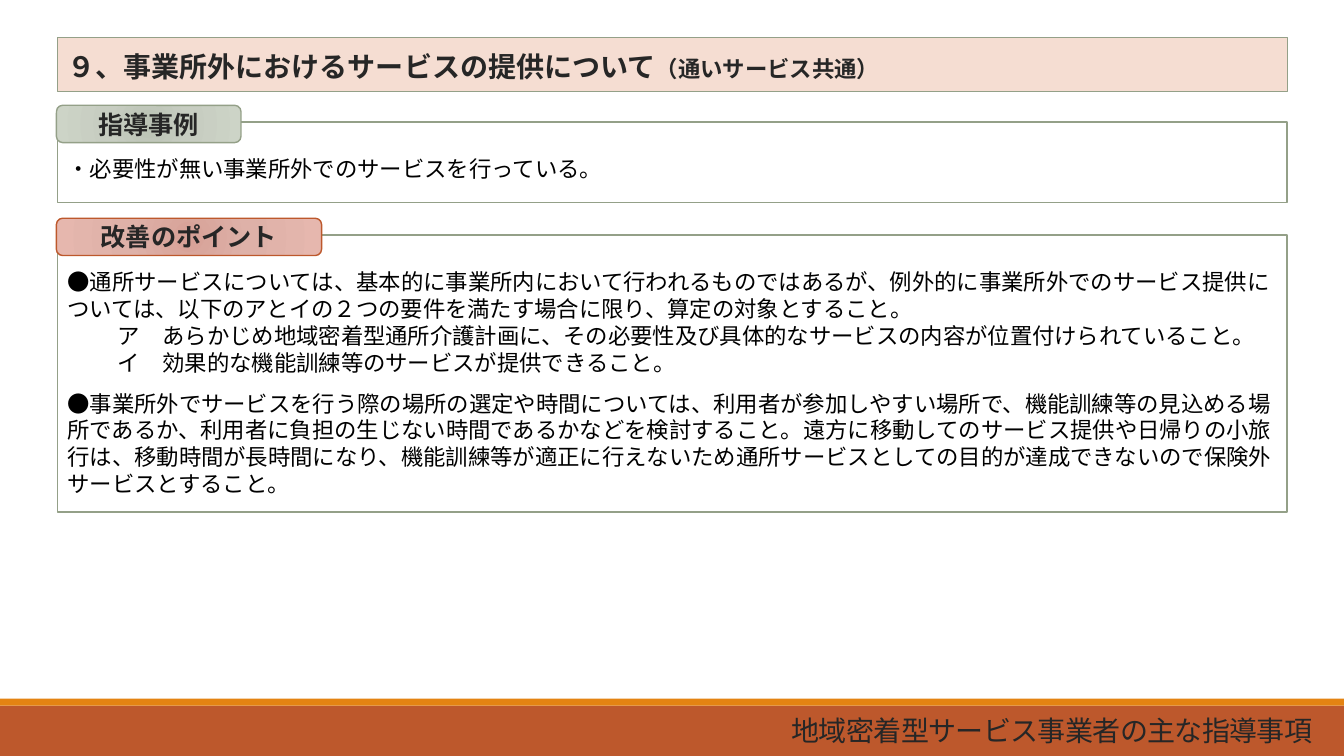
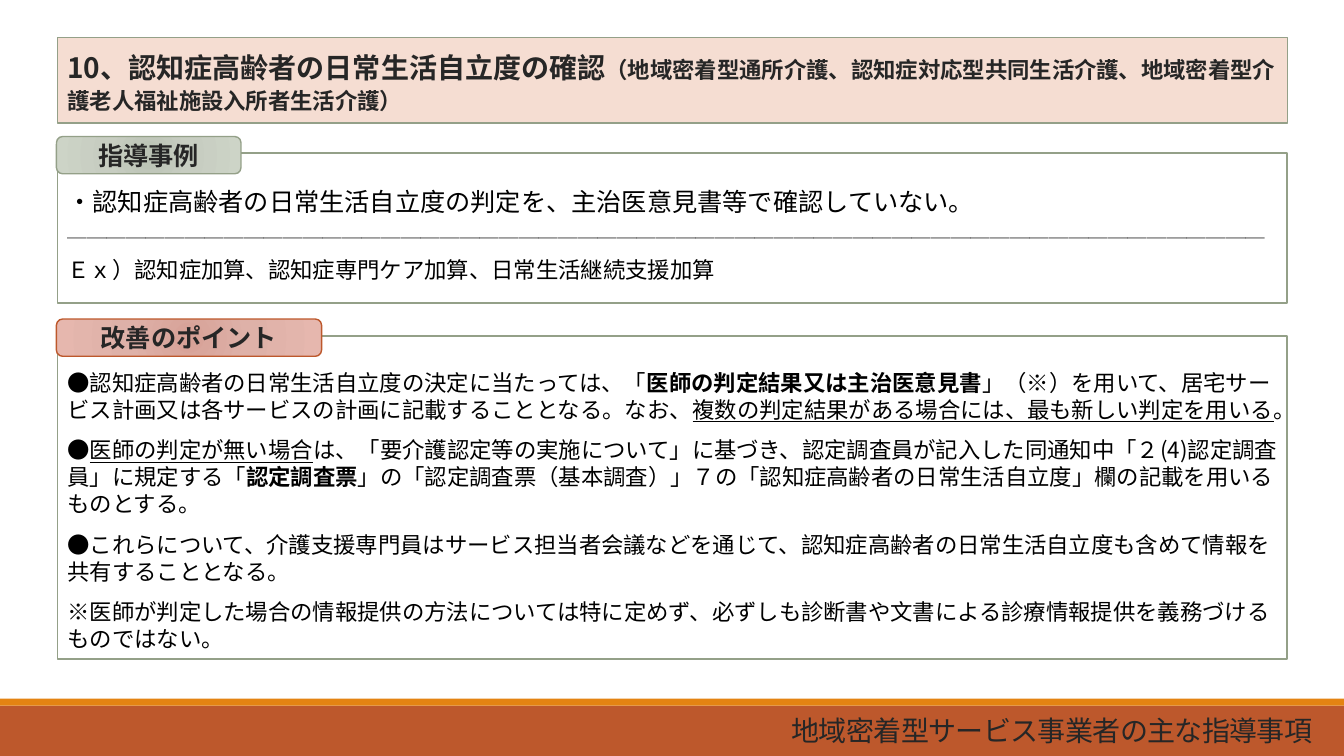
import dataclasses
from typing import Optional

import lxml.etree
import pptx
import pptx.dml.color
import pptx.enum.shapes
import pptx.enum.text
import pptx.oxml.ns
import pptx.presentation
import pptx.shapes.autoshape
import pptx.slide
import pptx.text.text
import pptx.util

Pt = pptx.util.Pt
Inches = pptx.util.Inches
Align = pptx.enum.text.PP_ALIGN
Anchor = pptx.enum.text.MSO_ANCHOR
Preset = pptx.enum.shapes.MSO_SHAPE
qn = pptx.oxml.ns.qn

WIDTH, HEIGHT = 13.33, 7.5
FONT = "Noto Sans CJK JP"
INK, BLACK, WHITE = "262626", "000000", "FFFFFF"
SAGE, RUST, ORANGE, PEACH = "94A088", "BD582C", "E48312", "F5DDD2"
LEFT, CONTENT_WIDTH = 4.28, 91.5
TITLE_TOP, TITLE_GAP, PANEL_GAP = 4.93, 4.0, 4.27
LABEL_LEFT, LABEL_HEIGHT, LABEL_RISE = 4.2, 4.93, 2.2
BAND_TOP, STRIPE_HEIGHT = 93.33, 0.93
LINE_RATIO = 1.205
FOOTER = "地域密着型サービス事業者の主な指導事項"


@dataclasses.dataclass(frozen=True)
class Span:
    text: str
    bold: bool = False
    underline: bool = False
    size: Optional[float] = None


@dataclasses.dataclass(frozen=True)
class Block:
    spans: list[Span]
    size: float = 16
    color: str = BLACK
    before: float = 0
    indent: float = 0
    align: Align = Align.LEFT
    line: Optional[float] = None


@dataclasses.dataclass(frozen=True)
class Label:
    text: str
    width: float
    line: str
    stops: tuple[str, str, str]


@dataclasses.dataclass(frozen=True)
class Panel:
    label: Label
    height: float
    blocks: list[Block]


@dataclasses.dataclass(frozen=True)
class Page:
    title: str
    scope: str
    title_height: float
    panels: list[Panel]


CASES = Label("指導事例", 13.73, SAGE, ("BBC3B5", "C7CDC1", "CDD4C7"))
POINTS = Label("改善のポイント", 19.73, RUST, ("D7A197", "DEB1A8", "E6B7AE"))


def rgb(value: str) -> pptx.dml.color.RGBColor:
    return pptx.dml.color.RGBColor.from_string(value)


def across(percent: float) -> pptx.util.Length:
    return Inches(WIDTH * percent / 100)


def down(percent: float) -> pptx.util.Length:
    return Inches(HEIGHT * percent / 100)


def body(text: str, **options: float) -> Block:
    return Block([Span(text)], **options)


def add_box(
    slide: pptx.slide.Slide,
    left: float,
    top: float,
    width: float,
    height: float,
    fill: Optional[str] = None,
    line: Optional[str] = None,
    line_width: float = 1,
    preset: Preset = Preset.RECTANGLE,
) -> pptx.shapes.autoshape.Shape:
    shape = slide.shapes.add_shape(
        preset, across(left), down(top), across(width), down(height)
    )
    shape.shadow.inherit = False
    if fill:
        shape.fill.solid()
        shape.fill.fore_color.rgb = rgb(fill)
    if line:
        shape.line.color.rgb = rgb(line)
        shape.line.width = Pt(line_width)
    else:
        shape.line.fill.background()
    return shape


def write_paragraph(paragraph: pptx.text.text._Paragraph, block: Block) -> None:
    paragraph.alignment = block.align
    paragraph.space_before = Pt(block.before)
    if block.line:
        paragraph.line_spacing = block.line
    font = paragraph.font
    font.name = FONT
    font.size = Pt(block.size)
    font.color.rgb = rgb(block.color)
    lxml.etree.SubElement(font._element, qn("a:ea"), typeface=FONT)
    if block.indent:
        properties = paragraph._p.get_or_add_pPr()
        properties.set("marL", str(Inches(block.indent)))
        properties.set("indent", "0")
    for span in block.spans:
        run = paragraph.add_run()
        run.text = span.text
        run.font.bold = span.bold
        run.font.underline = span.underline
        if span.size:
            run.font.size = Pt(span.size)


def write_text(
    shape: pptx.shapes.autoshape.Shape,
    blocks: list[Block],
    anchor: Anchor = Anchor.MIDDLE,
    top_inset: float = 0.05,
) -> None:
    frame = shape.text_frame
    frame.word_wrap = True
    frame.vertical_anchor = anchor
    frame.margin_top = Inches(top_inset)
    for index, block in enumerate(blocks):
        paragraph = frame.add_paragraph() if index else frame.paragraphs[0]
        write_paragraph(paragraph, block)


def fill_radial(
    shape: pptx.shapes.autoshape.Shape, stops: tuple[str, str, str]
) -> None:
    shape.fill.gradient()
    gradient = shape._element.spPr.find(qn("a:gradFill"))
    for child in list(gradient):
        gradient.remove(child)
    stop_list = lxml.etree.SubElement(gradient, qn("a:gsLst"))
    for position, color in zip((0, 45000, 100000), stops):
        stop = lxml.etree.SubElement(stop_list, qn("a:gs"), pos=str(position))
        lxml.etree.SubElement(stop, qn("a:srgbClr"), val=color)
    radial = lxml.etree.SubElement(gradient, qn("a:path"))
    radial.set("path", "circle")
    focus = lxml.etree.SubElement(radial, qn("a:fillToRect"))
    for side in "ltrb":
        focus.set(side, "100000")


def add_footer(slide: pptx.slide.Slide) -> None:
    add_box(slide, 0, BAND_TOP, 100, 100 - BAND_TOP, RUST)
    add_box(slide, 0, BAND_TOP - STRIPE_HEIGHT, 100, STRIPE_HEIGHT, ORANGE)
    footer = slide.shapes.add_textbox(
        across(LEFT), down(93.87), across(94.07), down(6.13)
    )
    block = Block([Span(FOOTER)], 20, INK, align=Align.RIGHT, line=0.85)
    write_text(footer, [block])
    footer.text_frame.paragraphs[0].runs[0].font._element.set("spc", "-50")


def add_panel(slide: pptx.slide.Slide, panel: Panel, top: float) -> None:
    box = add_box(slide, LEFT, top, CONTENT_WIDTH, panel.height, WHITE, SAGE, 1.25)
    blocks = [
        dataclasses.replace(block, line=Pt(block.size * LINE_RATIO))
        for block in panel.blocks
    ]
    write_text(box, blocks, Anchor.TOP, 0.33)
    label = panel.label
    tab = add_box(
        slide, LABEL_LEFT, top - LABEL_RISE, label.width, LABEL_HEIGHT,
        line=label.line, preset=Preset.ROUNDED_RECTANGLE,
    )
    fill_radial(tab, label.stops)
    write_text(tab, [Block([Span(label.text, True)], 18, INK, align=Align.CENTER)])


def add_page(presentation: pptx.presentation.Presentation, page: Page) -> None:
    slide = presentation.slides.add_slide(presentation.slide_layouts[6])
    add_footer(slide)
    title = add_box(
        slide, LEFT, TITLE_TOP, CONTENT_WIDTH, page.title_height, PEACH, SAGE
    )
    spans = [Span(page.title, True), Span(page.scope, True, size=16)]
    write_text(title, [Block(spans, 20, INK, line=Pt(21.5))], top_inset=0.13)
    top = TITLE_TOP + page.title_height + TITLE_GAP
    for panel in page.panels:
        add_panel(slide, panel, top)
        top += panel.height + PANEL_GAP


PAGES = [
    Page("９、事業所外におけるサービスの提供について", "（通いサービス共通）", 7.2, [
        Panel(CASES, 10.67, [
            body("・必要性が無い事業所外でのサービスを行っている。"),
        ]),
        Panel(POINTS, 36.67, [
            body("●通所サービスについては、基本的に事業所内において行われるものではあるが、例外的に事業所外でのサービス提供については、以下のアとイの２つの要件を満たす場合に限り、算定の対象とすること。"),
            body("ア　あらかじめ地域密着型通所介護計画に、その必要性及び具体的なサービスの内容が位置付けられていること。", indent=0.5),
            body("イ　効果的な機能訓練等のサービスが提供できること。", indent=0.5),
            body("●事業所外でサービスを行う際の場所の選定や時間については、利用者が参加しやすい場所で、機能訓練等の見込める場所であるか、利用者に負担の生じない時間であるかなどを検討すること。遠方に移動してのサービス提供や日帰りの小旅行は、移動時間が長時間になり、機能訓練等が適正に行えないため通所サービスとしての目的が達成できないので保険外サービスとすること。", before=9.6),
        ]),
    ]),
    Page("10、認知症高齢者の日常生活自立度の確認", "（地域密着型通所介護、認知症対応型共同生活介護、地域密着型介護老人福祉施設入所者生活介護）", 11.33, [
        Panel(CASES, 19.87, [
            body("・認知症高齢者の日常生活自立度の判定を、主治医意見書等で確認していない。", size=18),
            body("＿" * 61, size=14, color=INK),
            body("Ｅｘ）認知症加算、認知症専門ケア加算、日常生活継続支援加算", before=10.8),
        ]),
        Panel(POINTS, 42.8, [
            Block([
                Span("●認知症高齢者の日常生活自立度の決定に当たっては、「"),
                Span("医師の判定結果又は主治医意見書", bold=True),
                Span("」（※）を用いて、居宅サービス計画又は各サービスの計画に記載することとなる。なお、"),
                Span("複数の判定結果がある場合には、最も新しい判定を用いる", underline=True),
                Span("。"),
            ]),
            Block([
                Span("●"),
                Span("医師の判定が無い場合", underline=True),
                Span("は、「要介護認定等の実施について」に基づき、認定調査員が記入した同通知中「２(4)認定調査員」に規定する「"),
                Span("認定調査票", bold=True),
                Span("」の「認定調査票（基本調査）」７の「認知症高齢者の日常生活自立度」欄の記載を用いるものとする。"),
            ], before=9.6),
            body("●これらについて、介護支援専門員はサービス担当者会議などを通じて、認知症高齢者の日常生活自立度も含めて情報を共有することとなる。", before=9.6),
            body("※医師が判定した場合の情報提供の方法については特に定めず、必ずしも診断書や文書による診療情報提供を義務づけるものではない。", before=9.6),
        ]),
    ]),
]


def main() -> None:
    presentation = pptx.Presentation()
    presentation.slide_width = Inches(WIDTH)
    presentation.slide_height = Inches(HEIGHT)
    for page in PAGES:
        add_page(presentation, page)
    presentation.save("out.pptx")


if __name__ == "__main__":
    main()
